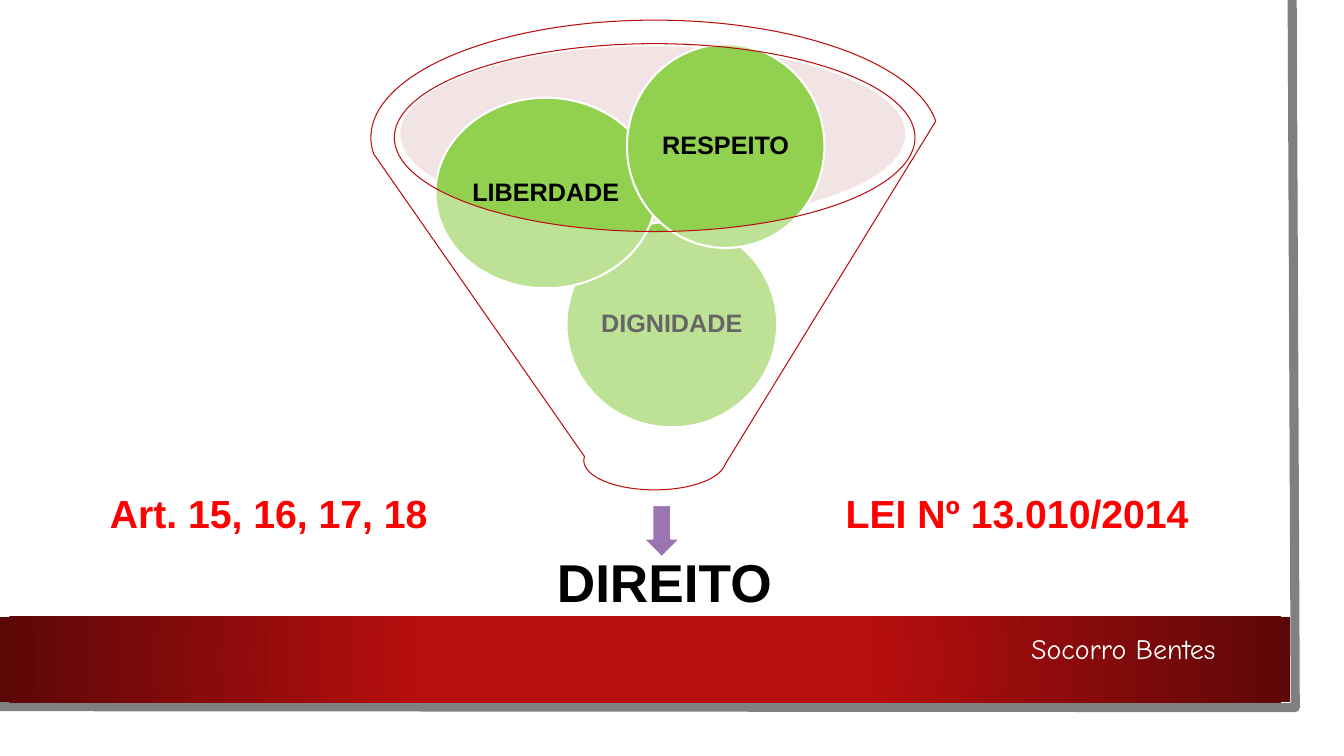
from dataclasses import dataclass

from lxml.etree import SubElement
from pptx import Presentation
from pptx.dml.color import RGBColor
from pptx.enum.shapes import MSO_SHAPE
from pptx.enum.text import MSO_ANCHOR, MSO_AUTO_SIZE, PP_ALIGN
from pptx.oxml import parse_xml
from pptx.oxml.ns import nsdecls, qn
from pptx.shapes.autoshape import Shape
from pptx.slide import Slide
from pptx.text.text import TextFrame
from pptx.util import Inches, Pt

COLORS = {
    "white": "FFFFFF",
    "black": "000000",
    "gray": "808080",
    "red": "B80E0F",
    "dark_red": "5C0707",
    "bright_red": "FF0000",
    "rose": "DFBDBD",
    "green": "92D050",
    "purple": "9B75B2",
}
WIDTH, HEIGHT = Inches(13.333), Inches(7.5)


@dataclass(frozen=True)
class Box:
    """Position and size in percent of the slide."""
    left: float
    top: float
    width: float
    height: float

    def emu(self) -> tuple[int, int, int, int]:
        return (across(self.left), down(self.top),
                across(self.width), down(self.height))


@dataclass(frozen=True)
class Figure:
    kind: MSO_SHAPE
    box: Box
    fill: str
    alpha: int = 100
    line: str | None = None
    line_width: float = 1.5
    text: str = ""


@dataclass(frozen=True)
class Label:
    text: str
    box: Box
    size: int = 28
    color: str = "bright_red"
    font: str = "Arial"
    bold: bool = True
    align: PP_ALIGN = PP_ALIGN.LEFT


def ball(text: str, box: Box) -> Figure:
    return Figure(MSO_SHAPE.OVAL, box, "green", line="white", text=text)


PANEL = Figure(MSO_SHAPE.RECTANGLE, Box(0, 0, 98.25, 96.93), "white")
BAND = Figure(MSO_SHAPE.RECTANGLE, Box(0, 81.6, 96, 11.33), "red")
FRAME = [(96.15, 0), (96.38, 93.6), (-0.22, 93.47)]
TITLE_BOX = Box(18.23, 69.6, 62.4, 15.6)
FUNNEL = [
    Figure(MSO_SHAPE.OVAL, Box(29.78, 6.13, 37.58, 23.2), "rose", alpha=40),
    Figure(MSO_SHAPE.DOWN_ARROW, Box(47.85, 66.8, 2.78, 6.93), "purple", line="white"),
    ball("DIGNIDADE", Box(42.15, 29.33, 15.68, 27.2)),
    ball("LIBERDADE", Box(32.4, 12.93, 16.43, 25.2)),
    ball("RESPEITO", Box(46.65, 5.87, 14.7, 26.93)),
    Figure(MSO_SHAPE.FUNNEL, Box(27.6, 2.67, 42.23, 62.13), "white", alpha=40,
           line="red", line_width=0.75),
]
LABELS = [
    Label("Socorro Bentes", Box(60.15, 82.93, 31.05, 5.87), 20, "white",
          "Comic Neue", False, PP_ALIGN.RIGHT),
    Label("Art. 15, 16, 17, 18", Box(7.43, 64.13, 25.8, 7.6)),
    Label("LEI Nº 13.010/2014", Box(62.18, 64.13, 29.03, 7.6)),
]


def across(share: float) -> int:
    return round(WIDTH * share / 100)


def down(share: float) -> int:
    return round(HEIGHT * share / 100)


def rgb(name: str) -> RGBColor:
    return RGBColor.from_string(COLORS[name])


def write(tf: TextFrame, text: str, *, size: int, color: str = "black",
          font: str = "Arial", bold: bool = True,
          align: PP_ALIGN = PP_ALIGN.CENTER,
          anchor: MSO_ANCHOR = MSO_ANCHOR.MIDDLE,
          spacing: float = 0.9, inset: float | None = None) -> None:
    tf.word_wrap = True
    tf.auto_size = MSO_AUTO_SIZE.NONE
    tf.vertical_anchor = anchor
    if inset is not None:
        tf.margin_left = tf.margin_right = Inches(inset)
        tf.margin_top = tf.margin_bottom = Inches(inset)
    p = tf.paragraphs[0]
    p.alignment = align
    p.line_spacing = spacing
    r = p.add_run()
    r.text = text
    r.font.name = font
    r.font.size = Pt(size)
    r.font.bold = bold
    r.font.color.rgb = rgb(color)


def add_figure(s: Slide, figure: Figure) -> Shape:
    sp = s.shapes.add_shape(figure.kind, *figure.box.emu())
    sp.shadow.inherit = False
    sp.fill.solid()
    sp.fill.fore_color.rgb = rgb(figure.fill)
    if figure.alpha < 100:
        color = sp.element.spPr.find(qn("a:solidFill"))[0]
        SubElement(color, qn("a:alpha"), val=str(figure.alpha * 1000))
    if figure.line:
        sp.line.color.rgb = rgb(figure.line)
        sp.line.width = Pt(figure.line_width)
    else:
        sp.line.fill.background()
    if figure.text:
        write(sp.text_frame, figure.text, size=18, inset=0.03)
    return sp


def add_label(s: Slide, label: Label) -> None:
    tf = s.shapes.add_textbox(*label.box.emu()).text_frame
    write(tf, label.text, size=label.size, color=label.color, font=label.font,
          bold=label.bold, align=label.align, anchor=MSO_ANCHOR.TOP, spacing=1.0)


def add_frame(s: Slide) -> None:
    start, *corners = [(across(x), down(y)) for x, y in FRAME]
    builder = s.shapes.build_freeform(*start)
    builder.add_line_segments(corners, close=False)
    sp = builder.convert_to_shape()
    sp.shadow.inherit = False
    sp.fill.background()
    sp.line.color.rgb = rgb("gray")
    sp.line.width = Pt(6.5)


def add_band(s: Slide) -> None:
    sp = add_figure(s, BAND)
    solid = sp.element.spPr.find(qn("a:solidFill"))
    solid.getparent().replace(solid, parse_xml(
        f'<a:gradFill {nsdecls("a")} rotWithShape="1"><a:gsLst>'
        f'<a:gs pos="34000"><a:srgbClr val="{COLORS["red"]}"/></a:gs>'
        f'<a:gs pos="100000"><a:srgbClr val="{COLORS["dark_red"]}"/></a:gs>'
        '</a:gsLst><a:path path="circle">'
        '<a:fillToRect l="50000" t="50000" r="50000" b="50000"/>'
        '</a:path></a:gradFill>'))


def add_title(s: Slide, text: str) -> None:
    title = s.shapes.title
    title.left, title.top, title.width, title.height = TITLE_BOX.emu()
    write(title.text_frame, text, size=38, inset=0.3)
    title.element.getparent().append(title.element)


def main() -> None:
    prs = Presentation()
    prs.slide_width, prs.slide_height = WIDTH, HEIGHT
    s = prs.slides.add_slide(prs.slide_layouts[5])
    add_figure(s, PANEL)
    add_frame(s)
    add_band(s)
    add_title(s, "DIREITO")
    for figure in FUNNEL:
        add_figure(s, figure)
    for label in LABELS:
        add_label(s, label)
    prs.save("out.pptx")


if __name__ == "__main__":
    main()
